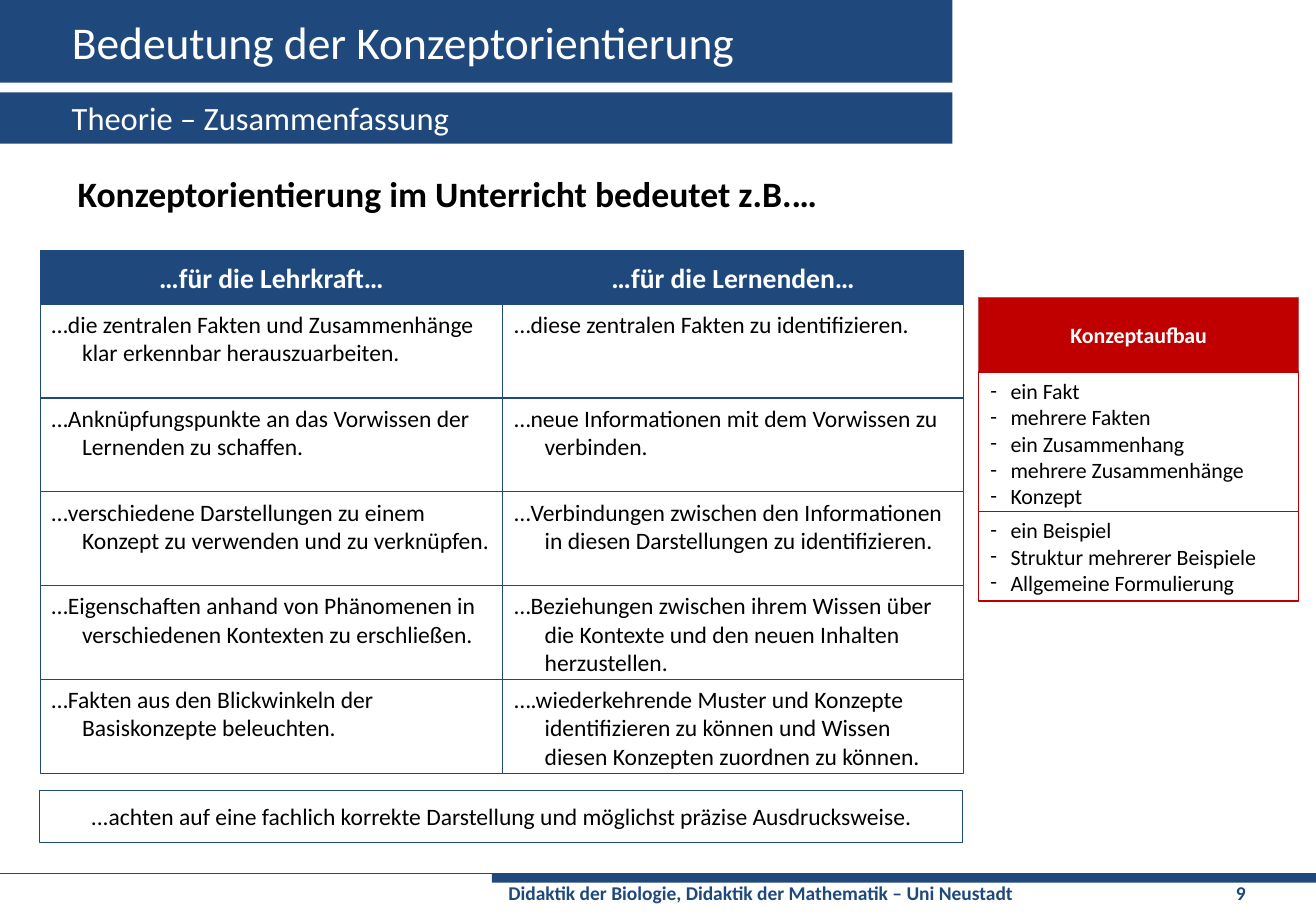
from lxml import etree
from pptx import Presentation
from pptx.dml.color import RGBColor
from pptx.enum.shapes import MSO_CONNECTOR, MSO_SHAPE
from pptx.enum.text import MSO_ANCHOR, MSO_AUTO_SIZE, PP_ALIGN
from pptx.oxml.ns import qn
from pptx.util import Pt

RECT, LINE = MSO_SHAPE.RECTANGLE, MSO_CONNECTOR.STRAIGHT
TOP, MID = MSO_ANCHOR.TOP, MSO_ANCHOR.MIDDLE
LEFT, MIDDLE = PP_ALIGN.LEFT, PP_ALIGN.CENTER
FIXED = MSO_AUTO_SIZE.NONE
BLUE, RED, ROSE, WHITE, BLACK = "1F497D", "C00000", "C0504D", "FFFFFF", "000000"


def write(shape, lines, size, color=BLACK, bold=False, align=LEFT,
          anchor=TOP, hang=0, bullet=None):
    """Fill a shape with paragraphs; hang is the hanging indent in points."""
    frame = shape.text_frame
    frame.auto_size = FIXED
    frame.word_wrap = True
    frame.vertical_anchor = anchor
    frame.text = "\n".join(lines)
    look = {"name": "Calibri", "size": Pt(size), "bold": bold}
    for para in frame.paragraphs:
        para.alignment = align
        for key, value in look.items():
            setattr(para.font, key, value)
        para.font.color.rgb = RGBColor.from_string(color)
        props = para._p.get_or_add_pPr()
        if hang:
            props.set("marL", str(Pt(hang)))
            props.set("indent", str(-Pt(hang)))
        if bullet:
            props.insert(0, etree.Element(qn("a:buFont"), typeface="Calibri"))
            props.insert(1, etree.Element(qn("a:buChar"), char=bullet))


def box(x, y, w, h, fill=None, line=None):
    shape = slide.shapes.add_shape(RECT, Pt(x), Pt(y), Pt(w), Pt(h))
    shape.shadow.inherit = False
    if fill:
        shape.fill.solid()
        shape.fill.fore_color.rgb = RGBColor.from_string(fill)
    else:
        shape.fill.background()
    if line:
        shape.line.color.rgb = RGBColor.from_string(line)
        shape.line.width = Pt(0.75)
    else:
        shape.line.fill.background()
    return shape


deck = Presentation()
deck.slide_width, deck.slide_height = Pt(810.75), Pt(567)
slide = deck.slides.add_slide(deck.slide_layouts[5])

# Bars and footer
for x, y, w, h in [(0, 0, 586.7, 51), (0, 57, 586.7, 31.5), (303, 538.5, 507.75, 5.5)]:
    box(x, y, w, h, BLUE)
rule = slide.shapes.add_connector(LINE, 0, Pt(538.3), deck.slide_width, Pt(538.3))
rule.line.color.rgb = RGBColor.from_string(BLUE)
rule.line.width = Pt(1)
etree.SubElement(rule._element.spPr, qn("a:effectLst"))

foot = slide.shapes.add_textbox(Pt(303.4), Pt(539.3), Pt(507.3), Pt(22))
write(foot, [" Didaktik der Biologie, Didaktik der Mathematik – Uni Neustadt\t\t9"],
      12, BLUE, True)
props = foot.text_frame.paragraphs[0]._p.get_or_add_pPr()
tabs = etree.Element(qn("a:tabLst"))
for stop in (387, 451):
    etree.SubElement(tabs, qn("a:tab"), pos=str(Pt(stop)), algn="l")
props.insert(0, tabs)

# Titles
title = slide.shapes.title
title.left, title.top, title.width, title.height = Pt(37.1), Pt(0), Pt(544.3), Pt(51)
write(title, ["Bedeutung der Konzeptorientierung"], 28, WHITE, anchor=MID)
slide.shapes._spTree.append(title._element)
sub = slide.shapes.add_textbox(Pt(37.1), Pt(56.8), Pt(544.3), Pt(31.5))
write(sub, ["Theorie – Zusammenfassung"], 20, WHITE, hang=28)
head = slide.shapes.add_textbox(Pt(40.7), Pt(102.5), Pt(730), Pt(404.5))
write(head, ["Konzeptorientierung im Unterricht bedeutet z.B.…"], 22, bold=True)

# Two columns of statements
columns = [
    (24.8, 285, "…für die Lehrkraft…", [
        "…die zentralen Fakten und Zusammenhänge klar erkennbar herauszuarbeiten.",
        "…Anknüpfungspunkte an das Vorwissen der Lernenden zu schaffen.",
        "…verschiedene Darstellungen zu einem Konzept zu verwenden und zu verknüpfen.",
        "…Eigenschaften anhand von Phänomenen in verschiedenen Kontexten zu erschließen.",
        "…Fakten aus den Blickwinkeln der Basiskonzepte beleuchten.",
    ]),
    (309.8, 283.8, "…für die Lernenden…", [
        "…diese zentralen Fakten zu identifizieren.",
        "…neue Informationen mit dem Vorwissen zu verbinden.",
        "…Verbindungen zwischen den Informationen in diesen Darstellungen zu identifizieren.",
        "…Beziehungen zwischen ihrem Wissen über die Kontexte und den neuen Inhalten "
        "herzustellen.",
        "….wiederkehrende Muster und Konzepte identifizieren zu können und Wissen "
        "diesen Konzepten zuordnen zu können.",
    ]),
]
STEP = 57.8
for x, w, name, cells in columns:
    write(box(x, 154.4, w, 33.2, BLUE, BLUE), [name], 17, WHITE, True, MIDDLE, MID)
    for row, cell in enumerate(cells):
        write(box(x, 187.5 + row * STEP, w, STEP, line=BLUE), [cell], 14.5, hang=18.7)

write(box(24.3, 487.2, 568.8, 32, line=BLUE),
      ["...achten auf eine fachlich korrekte Darstellung und möglichst präzise "
       "Ausdrucksweise."], 14.5, align=MIDDLE, anchor=MID, hang=18.7)

# Concept structure
write(box(603, 183.5, 197, 45.7, RED, ROSE), ["Konzeptaufbau"],
      13.5, WHITE, True, MIDDLE, MID)
lists = [
    (229.3, 85.8, ["ein Fakt", "mehrere Fakten", "ein Zusammenhang",
                   "mehrere Zusammenhänge", "Konzept"]),
    (315.1, 55.4, ["ein Beispiel", "Struktur mehrerer Beispiele",
                   "Allgemeine Formulierung"]),
]
for y, h, items in lists:
    write(box(603, y, 197, h, line=RED), items, 13.5, hang=12.5, bullet="-")

deck.save("out.pptx")
